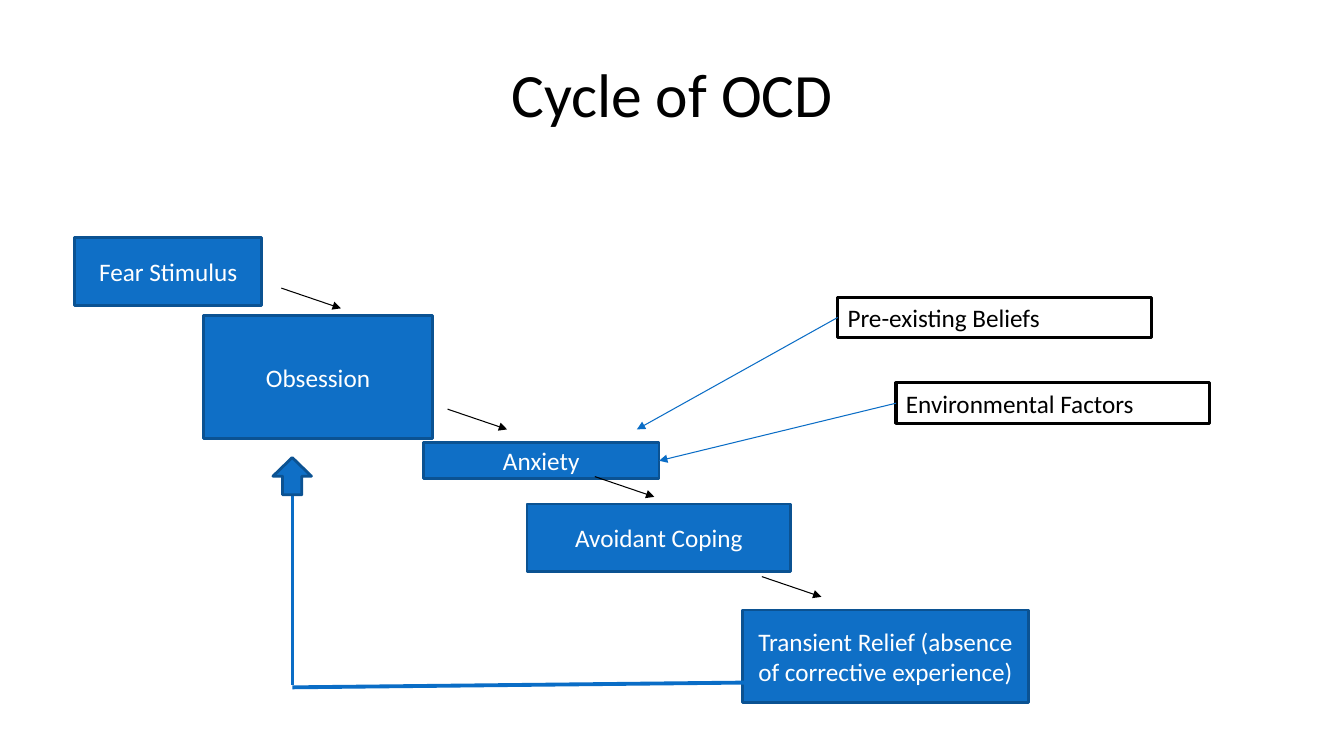
"""Build the Cycle of OCD slide."""
from dataclasses import dataclass

from lxml.etree import SubElement
from pptx import Presentation
from pptx.dml.color import RGBColor
from pptx.enum.shapes import MSO_CONNECTOR as Link, MSO_SHAPE as Preset
from pptx.enum.text import MSO_ANCHOR as Anchor, MSO_AUTO_SIZE as Fit, PP_ALIGN as Align
from pptx.oxml.ns import qn
from pptx.util import Cm, Pt

BLUE, DARK_BLUE, LINK_BLUE = "0F6FC6", "0B5292", "0A6DC6"
BLACK, WHITE = "000000", "FFFFFF"


@dataclass
class Step:
    text: str
    left: float
    top: float
    width: float
    height: float


@dataclass
class Factor:
    text: str
    left: float
    top: float
    tip: tuple[float, float]
    width: float = 7.9
    height: float = 1.02


STEPS = [
    Step("Fear Stimulus", 1.88, 5.99, 4.72, 1.7),
    Step("Obsession", 5.13, 7.95, 5.77, 3.1),
    Step("Avoidant Coping", 13.28, 12.7, 6.65, 1.7),
    Step("Transient Relief (absence of corrective experience)", 18.72, 15.37, 7.19, 2.34),
    Step("Anxiety", 10.67, 11.15, 5.94, 0.91),
]
FACTORS = [
    Factor("Pre-existing Beliefs", 21.11, 7.49, (16.05, 10.82)),
    Factor("Environmental Factors", 22.58, 9.65, (16.61, 11.61)),
]
STEP_ARROW_STARTS = [(7.09, 7.26), (11.28, 10.31), (14.99, 12.01), (19.2, 14.53)]
STEP_ARROW_RUN, STEP_ARROW_DROP = 1.5, 0.51
RETURN_LINES = [((7.37, 12.47), (7.37, 17.27)), ((7.37, 17.32), (18.75, 17.2))]


def rgb(value: str) -> RGBColor:
    return RGBColor.from_string(value)


def write(box, text: str, *, size: float = 18, color: str = WHITE,
          align=Align.CENTER, anchor=Anchor.MIDDLE) -> None:
    frame = box.text_frame
    frame.word_wrap = True
    frame.vertical_anchor = anchor
    para = frame.paragraphs[0]
    para.alignment = align
    span = para.add_run()
    span.text = text
    span.font.name = "Calibri"
    span.font.size = Pt(size)
    span.font.color.rgb = rgb(color)


def add_box(page, preset, left: float, top: float, width: float, height: float, *,
            fill: str | None = BLUE, line: str = DARK_BLUE, weight: float = 2):
    box = page.shapes.add_shape(preset, Cm(left), Cm(top), Cm(width), Cm(height))
    box.shadow.inherit = False
    if fill:
        box.fill.solid()
        box.fill.fore_color.rgb = rgb(fill)
    else:
        box.fill.background()
    box.line.color.rgb = rgb(line)
    box.line.width = Pt(weight)
    return box


def add_line(page, start: tuple[float, float], end: tuple[float, float], *,
             color: str = LINK_BLUE, weight: float = 0.75, arrow: bool = True) -> None:
    line = page.shapes.add_connector(Link.STRAIGHT, *map(Cm, start + end))
    line.line.color.rgb = rgb(color)
    line.line.width = Pt(weight)
    properties = line.element.spPr
    SubElement(properties, qn("a:effectLst"))
    if arrow:
        SubElement(properties.find(qn("a:ln")), qn("a:tailEnd"), type="triangle")


def main() -> None:
    deck = Presentation()
    deck.slide_width, deck.slide_height = Cm(33.87), Cm(19.05)
    page = deck.slides.add_slide(deck.slide_layouts[6])

    title = page.shapes.add_textbox(Cm(1.7), Cm(0.76), Cm(30.48), Cm(3.18))
    write(title, "Cycle of OCD", size=44, color=BLACK)

    for step in STEPS:
        box = add_box(page, Preset.FLOWCHART_PROCESS,
                      step.left, step.top, step.width, step.height)
        write(box, step.text)

    for start, end in RETURN_LINES:
        add_line(page, start, end, weight=2.75, arrow=False)
    add_box(page, Preset.UP_ARROW, 6.88, 11.53, 0.97, 0.94)

    for x, y in STEP_ARROW_STARTS:
        add_line(page, (x, y), (x + STEP_ARROW_RUN, y + STEP_ARROW_DROP), color=BLACK)

    for factor in FACTORS:
        box = add_box(page, Preset.RECTANGLE, factor.left, factor.top, factor.width,
                      factor.height, fill=None, line=BLACK, weight=2.25)
        write(box, factor.text, color=BLACK, align=Align.LEFT, anchor=Anchor.TOP)
        box.text_frame.auto_size = Fit.SHAPE_TO_FIT_TEXT
        add_line(page, (factor.left, factor.top + factor.height / 2), factor.tip)

    deck.save("out.pptx")


if __name__ == "__main__":
    main()
